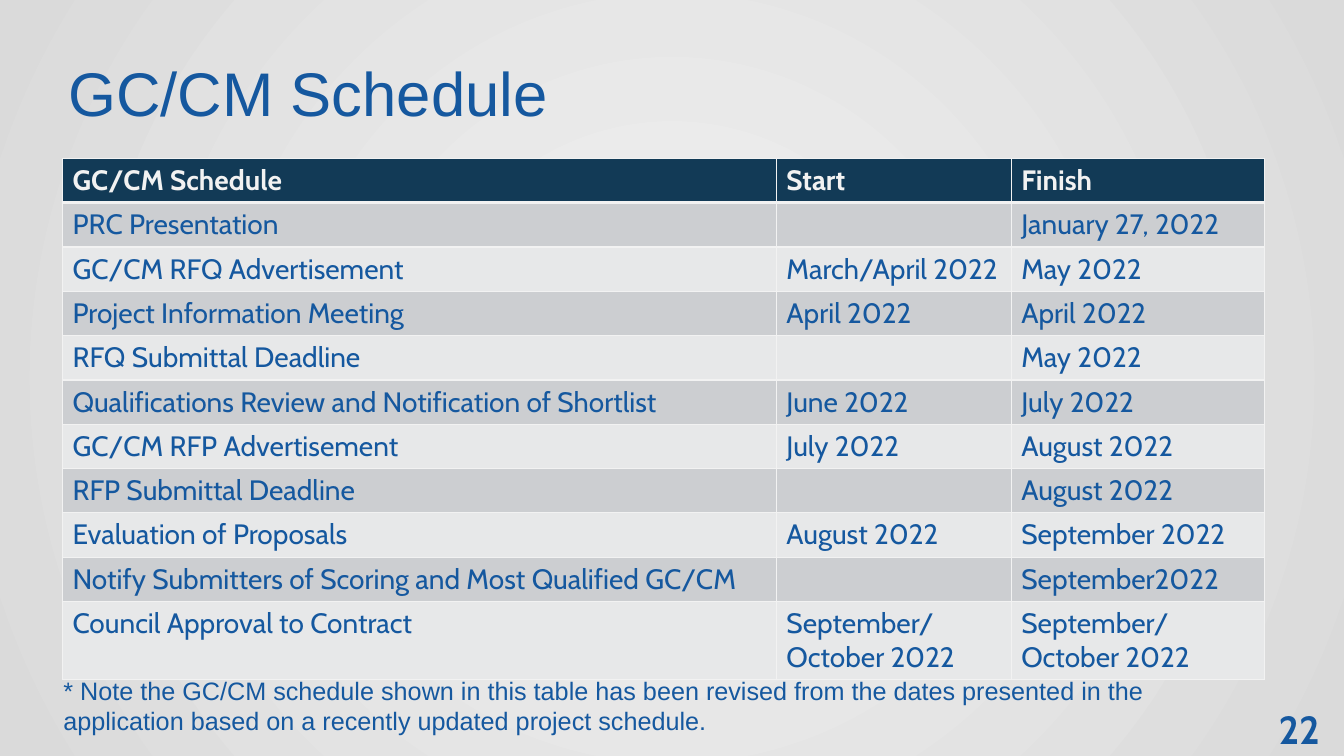
"""Build the GC/CM schedule slide."""
from lxml import etree
from pptx import Presentation
from pptx import oxml
from pptx import util as u
from pptx.dml.color import RGBColor
from pptx.enum import text
from pptx.oxml.ns import nsdecls, qn

BLUE = RGBColor(0x15, 0x58, 0x9F)
NAVY = RGBColor(0x12, 0x3A, 0x56)
PALE = RGBColor(0xF2, 0xF2, 0xF2)
EDGE = RGBColor(0xDA, 0xDA, 0xDA)
BANDS = [RGBColor(0xE7, 0xE8, 0xE9), RGBColor(0xCC, 0xCE, 0xD1)]

ROWS = [
    ("GC/CM Schedule", "Start", "Finish"),
    ("PRC Presentation", "", "January 27, 2022"),
    ("GC/CM RFQ Advertisement", "March/April 2022", "May 2022"),
    ("Project Information Meeting", "April 2022", "April 2022"),
    ("RFQ Submittal Deadline", "", "May 2022"),
    ("Qualifications Review and Notification of Shortlist", "June 2022", "July 2022"),
    ("GC/CM RFP Advertisement", "July 2022", "August 2022"),
    ("RFP Submittal Deadline", "", "August 2022"),
    ("Evaluation of Proposals", "August 2022", "September 2022"),
    ("Notify Submitters of Scoring and Most Qualified GC/CM", "", "September2022"),
    ("Council Approval to Contract", "September/ October 2022", "September/ October 2022"),
]


def style(p, size, font, color, bold=False):
    for r in p.runs:
        r.font.size = u.Pt(size)
        r.font.name = font
        r.font.color.rgb = color
        r.font.bold = bold


def add_text(s, box, words, size, font, bold=False):
    sp = s.shapes.add_textbox(*[u.Inches(v) for v in box])
    tf = sp.text_frame
    tf.word_wrap = True
    tf.text = words
    style(tf.paragraphs[0], size, font, BLUE, bold)
    return tf


prs = Presentation()
prs.slide_width = u.Inches(13.33)
prs.slide_height = u.Inches(7.5)
s = prs.slides.add_slide(prs.slide_layouts[6])

fill = s.background.fill
fill.gradient()
for stop, color in zip(fill.gradient_stops, (PALE, EDGE)):
    stop.color.rgb = color
lin = next(s.element.iter(qn("a:lin")))
lin.getparent().replace(lin, oxml.parse_xml(
    f'<a:path {nsdecls("a")} path="circle">'
    '<a:fillToRect l="50000" t="50000" r="50000" b="50000"/></a:path>'))

tf = add_text(s, (10.08, 6.95, 3.11, 0.4), "22", 28, "Cabin", True)
tf.paragraphs[0].alignment = text.PP_ALIGN.RIGHT
tf = add_text(s, (0.58, 0.5, 10.67, 0.83), "GC/CM Schedule", 44, "Arial")
tf.vertical_anchor = text.MSO_ANCHOR.MIDDLE

table = s.shapes.add_table(len(ROWS), 3, u.Inches(0.62), u.Inches(1.57),
                           u.Inches(11.92), u.Inches(5.17)).table
for col, width in zip(table.columns, (7.08, 2.33, 2.51)):
    col.width = u.Inches(width)
for i, row in enumerate(ROWS):
    table.rows[i].height = u.Inches(0.77 if i == len(ROWS) - 1 else 0.44)
    for j, words in enumerate(row):
        cell = table.cell(i, j)
        cell.text = words
        style(cell.text_frame.paragraphs[0], 20, "Cabin", BLUE if i else PALE, i == 0)
        cell.fill.solid()
        cell.fill.fore_color.rgb = BANDS[i % 2] if i else NAVY
        tcPr = cell._tc.get_or_add_tcPr()
        for k, side in enumerate(("lnL", "lnR", "lnT", "lnB")):
            thick = (i, side) in ((0, "lnB"), (1, "lnT"))
            ln = etree.Element(qn(f"a:{side}"), w=str(u.Pt(3 if thick else 1)))
            solid = etree.SubElement(ln, qn("a:solidFill"))
            etree.SubElement(solid, qn("a:srgbClr"), val=str(PALE))
            tcPr.insert(k, ln)

add_text(s, (0.53, 6.65, 11.97, 0.75),
         "* Note the GC/CM schedule shown in this table has been revised from the dates "
         "presented in the application based on a recently updated project schedule.",
         18, "Arial")

prs.save("out.pptx")
